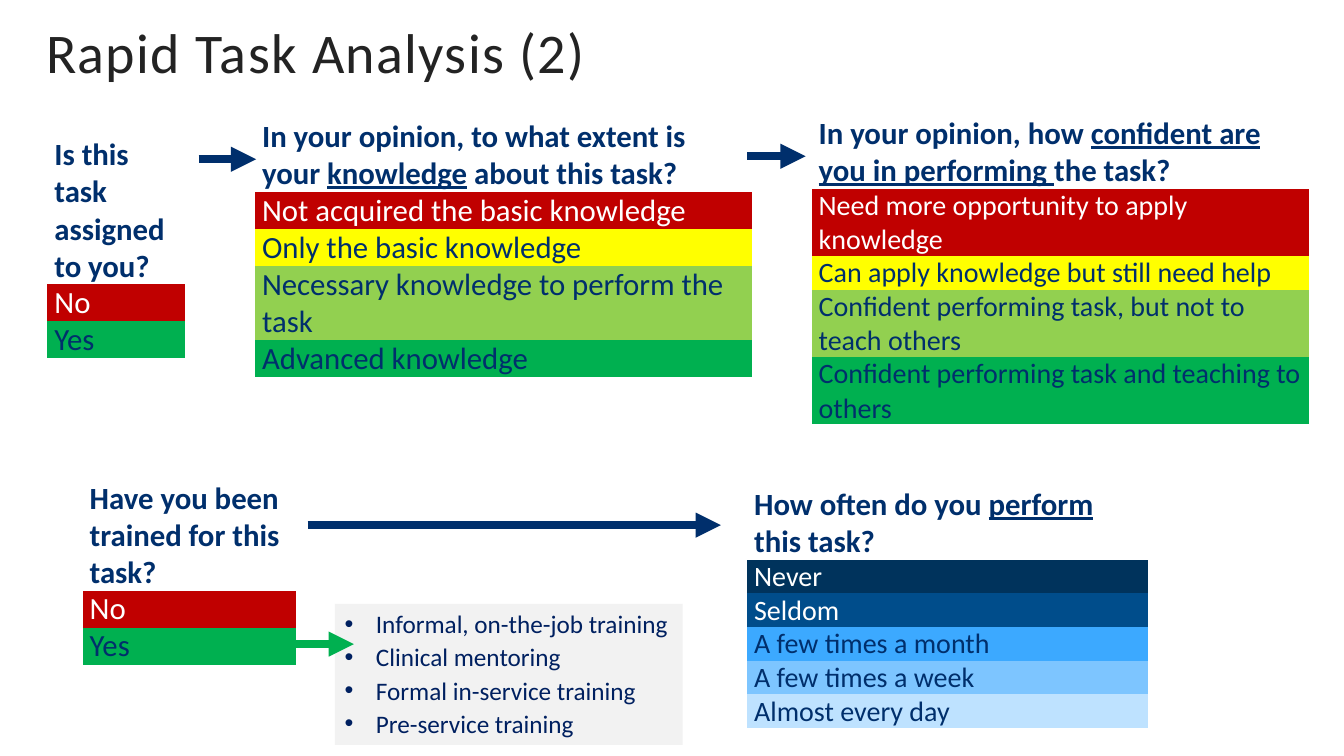
import pptx
import pptx.dml.color
import pptx.enum.shapes
import pptx.enum.text
import pptx.oxml
import pptx.oxml.ns
import pptx.util
from pptx.util import Inches

FONT = "Calibri"
NO_GRID_STYLE = "{2D5ABB26-0587-4C30-8999-92F81FD0307C}"
COLORS = {
    "navy": "002F6C", "ink": "232323", "bullet": "002060", "white": "FFFFFF",
    "panel": "F2F2F2", "red": "C00000", "yellow": "FFFF00",
    "lime": "92D050", "green": "00B050",
    "blue1": "00335C", "blue2": "004D8B", "blue3": "3CA9FF",
    "blue4": "7DC5FF", "blue5": "BEE2FF",
}
DARK_FILLS = {"red", "blue1", "blue2"}
YES_NO = [("No", "red"), ("Yes", "green")]

# left, top, width, question (underlined part between bars), answer size, answers
QUESTIONS = [
    (0.47, 1.35, 1.36, "Is this task assigned to you?", 22, YES_NO),
    (2.53, 1.17, 4.93,
     "In your opinion, to what extent is your |knowledge| about this task?", 22,
     [("Not acquired the basic knowledge", "red"),
      ("Only the basic knowledge", "yellow"),
      ("Necessary knowledge to perform the task", "lime"),
      ("Advanced knowledge", "green")]),
    (8.05, 1.14, 4.93,
     "In your opinion, how |confident are you in performing |the task?", 20,
     [("Need more opportunity to apply knowledge", "red"),
      ("Can apply knowledge but still need help", "yellow"),
      ("Confident performing task, but not to teach others", "lime"),
      ("Confident performing task and teaching to others", "green")]),
    (0.82, 4.76, 2.12, "Have you been trained for this task?", 22, YES_NO),
    (7.41, 4.82, 3.98, "How often do you |perform |this task?", 20,
     [("Never", "blue1"), ("Seldom", "blue2"), ("A few times a month", "blue3"),
      ("A few times a week", "blue4"), ("Almost every day", "blue5")]),
]

TRAINING_TYPES = ["Informal, on-the-job training", "Clinical mentoring",
                  "Formal in-service training", "Pre-service training"]

# start x, end x, y, color
ARROWS = [
    (1.97, 2.54, 1.58, "navy"),
    (7.41, 7.99, 1.55, "navy"),
    (3.05, 7.15, 5.21, "navy"),
    (2.93, 3.51, 6.39, "green"),
]


def rgb(name):
    return pptx.dml.color.RGBColor.from_string(COLORS[name])


def style_font(font, size, color, bold=False):
    font.name = FONT
    font.size = pptx.util.Pt(size)
    font.bold = bold
    font.color.rgb = rgb(color)


def add_title(page, text):
    box = page.shapes.add_textbox(Inches(0.36), Inches(0.1), Inches(10.63), Inches(0.94))
    frame = box.text_frame
    frame.word_wrap = True
    frame.vertical_anchor = pptx.enum.text.MSO_ANCHOR.MIDDLE
    frame.text = text
    para = frame.paragraphs[0]
    para.line_spacing = 0.8
    span = para.runs[0]
    style_font(span.font, 40, "ink")
    span.font._element.set("spc", "100")


def fill_cell(cell, parts, size, color, bold=False, fill=None):
    cell.margin_left = cell.margin_right = Inches(0.07)
    cell.margin_top = cell.margin_bottom = 0
    if fill:
        cell.fill.solid()
        cell.fill.fore_color.rgb = rgb(fill)
    else:
        cell.fill.background()
    para = cell.text_frame.paragraphs[0]
    for index, part in enumerate(parts):
        span = para.add_run()
        span.text = part
        style_font(span.font, size, color, bold)
        if index % 2:
            span.font.underline = True


def add_question(page, left, top, width, question, size, answers):
    # Rows grow to fit their text
    row_height = Inches(0.3)
    count = len(answers) + 1
    frame = page.shapes.add_table(count, 1, Inches(left), Inches(top),
                                  Inches(width), row_height * count)
    table = frame.table
    table.first_row = table.horz_banding = False
    table._tbl.tblPr.find(pptx.oxml.ns.qn("a:tableStyleId")).text = NO_GRID_STYLE
    fill_cell(table.cell(0, 0), question.split("|"), 22, "navy", bold=True)
    for row, (answer, fill) in enumerate(answers, start=1):
        color = "white" if fill in DARK_FILLS else "navy"
        fill_cell(table.cell(row, 0), [answer], size, color, fill=fill)


def add_bullet_panel(page, items):
    box = page.shapes.add_shape(pptx.enum.shapes.MSO_SHAPE.RECTANGLE, Inches(3.32),
                                Inches(5.99), Inches(3.45), Inches(1.4))
    box.shadow.inherit = False
    box.fill.solid()
    box.fill.fore_color.rgb = rgb("panel")
    box.line.fill.background()
    frame = box.text_frame
    frame.word_wrap = True
    frame.auto_size = pptx.enum.text.MSO_AUTO_SIZE.SHAPE_TO_FIT_TEXT
    frame.vertical_anchor = pptx.enum.text.MSO_ANCHOR.TOP
    frame.text = "\n".join(items)
    for index, para in enumerate(frame.paragraphs):
        para.alignment = pptx.enum.text.PP_ALIGN.LEFT
        if index:
            para.space_before = pptx.util.Pt(2)
        properties = para._p.get_or_add_pPr()
        properties.set("marL", str(Inches(0.31)))
        properties.set("indent", str(-Inches(0.31)))
        for tag, name, value in (("a:buFont", "typeface", "Arial"),
                                 ("a:buChar", "char", "•")):
            bullet = pptx.oxml.xmlchemy.OxmlElement(tag)
            bullet.set(name, value)
            properties.append(bullet)
        style_font(para.runs[0].font, 18, "bullet")


def add_arrow(page, start, end, y, color):
    arrow = page.shapes.add_connector(pptx.enum.shapes.MSO_CONNECTOR.STRAIGHT,
                                      Inches(start), Inches(y), Inches(end), Inches(y))
    arrow.line.width = pptx.util.Pt(6)
    arrow.line.color.rgb = rgb(color)
    head = pptx.oxml.xmlchemy.OxmlElement("a:tailEnd")
    head.set("type", "triangle")
    arrow.line._get_or_add_ln().append(head)
    arrow._element.spPr.append(pptx.oxml.xmlchemy.OxmlElement("a:effectLst"))


def main():
    deck = pptx.Presentation()
    deck.slide_width = Inches(13.33)
    deck.slide_height = Inches(7.5)
    page = deck.slides.add_slide(deck.slide_layouts[6])

    # Title
    add_title(page, "Rapid Task Analysis (2)")

    # Questions with their answer scales
    for question in QUESTIONS:
        add_question(page, *question)

    # Kinds of training
    add_bullet_panel(page, TRAINING_TYPES)

    # Flow between the questions
    for arrow in ARROWS:
        add_arrow(page, *arrow)

    deck.save("out.pptx")


if __name__ == "__main__":
    main()
